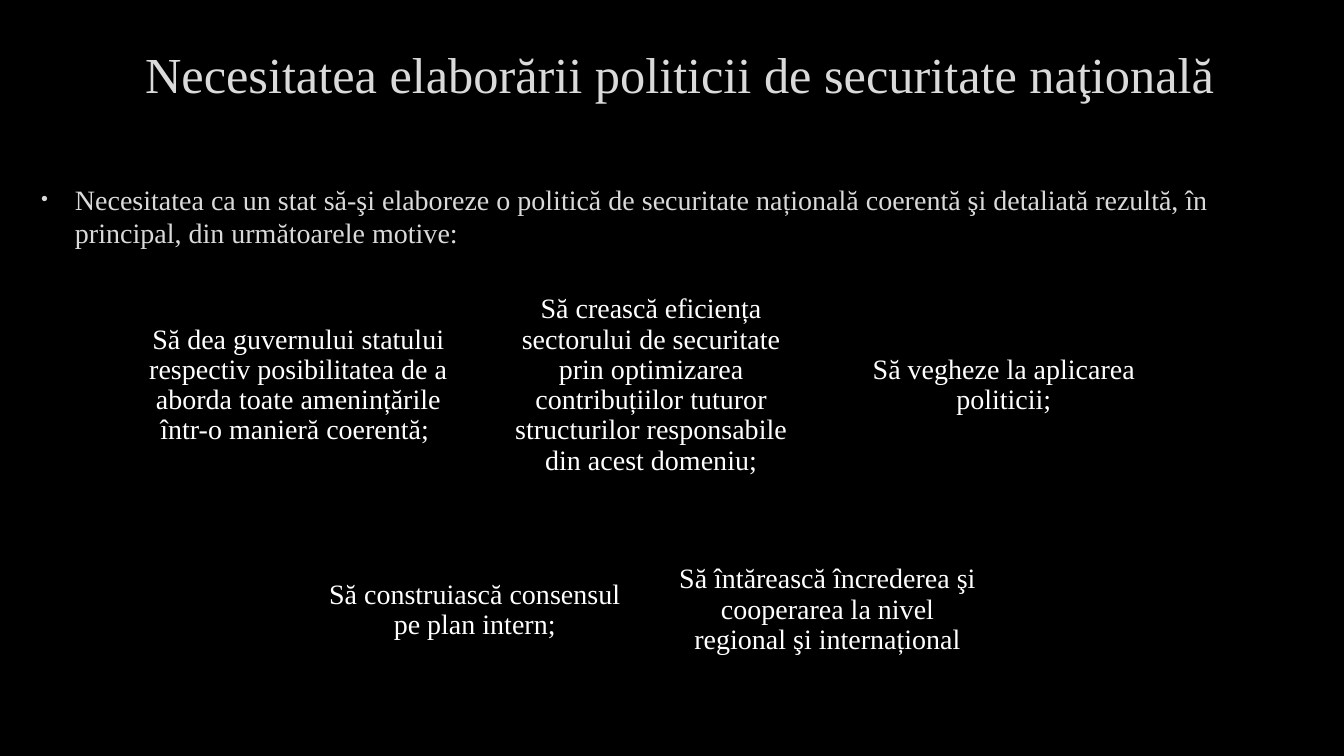
"""Builds the slide on why a national security policy is needed."""
from dataclasses import dataclass

from lxml import etree
from pptx import Presentation
from pptx import util as u
from pptx.dml import color
from pptx.enum import shapes, text
from pptx.oxml import ns

FONT = "Times New Roman"
BLACK, WHITE, GREY = "000000", "FFFFFF", "DADADA"
CARD_W, CARD_H = 8.08, 4.85
PITCH_X, PITCH_Y = 8.89, 5.66
CENTRE_X, TOP = 16.41, 7.29
ROWS = [
    [
        "Să dea guvernului statului respectiv posibilitatea de a aborda toate amenințările într-o manieră coerentă; ",
        "Să crească eficiența sectorului de securitate prin optimizarea contribuțiilor tuturor structurilor responsabile din acest domeniu;",
        "Să vegheze la aplicarea politicii;",
    ],
    [
        "Să construiască consensul pe plan intern;",
        "Să întărească încrederea şi cooperarea la nivel regional şi internațional",
    ],
]


@dataclass
class Block:
    """Text with its frame in centimetres and its formats."""
    words: str
    box: tuple[float, float, float, float]
    size: int
    colour: str
    frame: dict
    para: dict


def rgb(value: str) -> color.RGBColor:
    """Turn a hex string into a colour."""
    return color.RGBColor.from_string(value)


def apply(target, formats: dict) -> None:
    """Set each format value on the target."""
    for name, value in formats.items():
        setattr(target, name, value)


def write(sp, block: Block):
    """Fill a shape with the text of a block and return the paragraph."""
    tf = sp.text_frame
    apply(tf, {"word_wrap": True, **block.frame})
    p = tf.paragraphs[0]
    apply(p, block.para)
    r = p.add_run()
    r.text = block.words
    apply(r.font, {"name": FONT, "size": u.Pt(block.size)})
    r.font.color.rgb = rgb(block.colour)
    return p


def add_text(s, block: Block):
    """Add a text box and return its paragraph."""
    return write(s.shapes.add_textbox(*map(u.Cm, block.box)), block)


def add_card(s, block: Block) -> None:
    """Add a filled rectangle with centred text."""
    sp = s.shapes.add_shape(shapes.MSO_SHAPE.RECTANGLE, *map(u.Cm, block.box))
    sp.shadow.inherit = False
    sp.fill.solid()
    sp.fill.fore_color.rgb = rgb(BLACK)
    sp.line.color.rgb = rgb(BLACK)
    sp.line.width = u.Pt(1.25)
    write(sp, block)


def add_bullet(p, colour: str) -> None:
    """Give a paragraph a hanging bullet."""
    ppr = p._p.get_or_add_pPr()
    ppr.set("marL", str(u.Cm(0.95)))
    ppr.set("indent", str(u.Cm(-0.85)))
    clr = etree.SubElement(ppr, ns.qn("a:buClr"))
    etree.SubElement(clr, ns.qn("a:srgbClr"), val=colour)
    etree.SubElement(ppr, ns.qn("a:buSzPct"), val="70000")
    etree.SubElement(ppr, ns.qn("a:buFont"), typeface="Arial")
    etree.SubElement(ppr, ns.qn("a:buChar"), char="•")


def main() -> None:
    """Build and save the slide."""
    prs = Presentation()
    apply(prs, {"slide_width": u.Cm(33.87), "slide_height": u.Cm(19.05)})
    s = prs.slides.add_slide(prs.slide_layouts[6])
    s.background.fill.solid()
    s.background.fill.fore_color.rgb = rgb(BLACK)

    middle = {"vertical_anchor": text.MSO_ANCHOR.MIDDLE}
    centred = {"alignment": text.PP_ALIGN.CENTER}
    add_text(s, Block("Necesitatea elaborării politicii de securitate naţională",
                      (2.77, 0.51, 28.75, 2.69), 36, GREY, middle, centred))
    intro = add_text(s, Block(
        "Necesitatea ca un stat să-şi elaboreze o politică de securitate națională coerentă şi detaliată rezultă, în principal, din următoarele motive:",
        (0.69, 4.47, 30.18, 1.8), 20, GREY, {},
        {"space_before": u.Pt(4), "space_after": u.Pt(6)}))
    add_bullet(intro, GREY)

    sides = ("left", "top", "right", "bottom")
    card_frame = {**middle, **{f"margin_{side}": u.Cm(0.2) for side in sides}}
    card_para = {**centred, "line_spacing": 0.9, "space_after": u.Pt(7)}
    for row, reasons in enumerate(ROWS):
        left = CENTRE_X - ((len(reasons) - 1) * PITCH_X + CARD_W) / 2
        for col, reason in enumerate(reasons):
            box = (left + col * PITCH_X, TOP + row * PITCH_Y, CARD_W, CARD_H)
            add_card(s, Block(reason, box, 20, WHITE, card_frame, card_para))
    prs.save("out.pptx")


if __name__ == "__main__":
    main()
